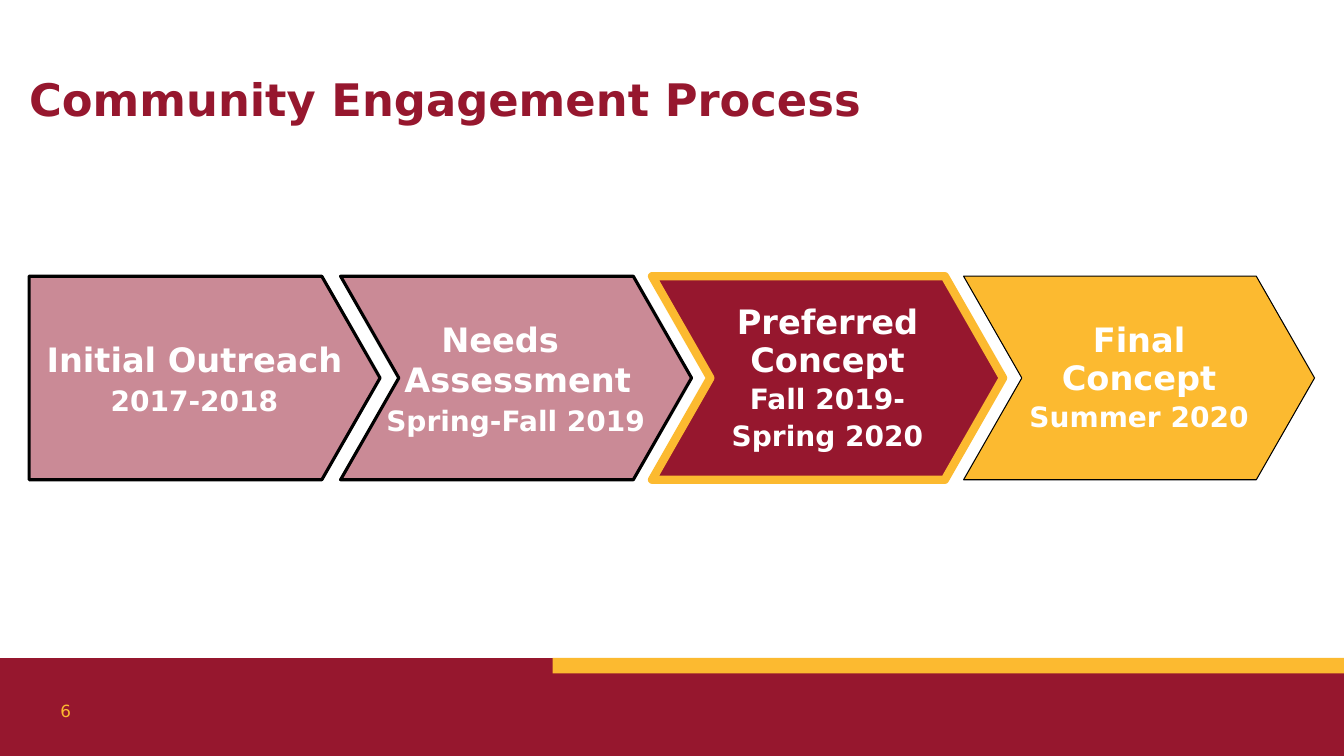
import pptx
import pptx.dml.color
import pptx.enum.shapes
import pptx.enum.text
import pptx.oxml.ns
import pptx.util
from lxml import etree

Pt = pptx.util.Pt
RGBColor = pptx.dml.color.RGBColor
ALIGN = pptx.enum.text.PP_ALIGN

MAROON = RGBColor(0x96, 0x17, 0x2E)
GOLD = RGBColor(0xFC, 0xBA, 0x30)
WHITE = RGBColor(0xFF, 0xFF, 0xFF)
BLACK = RGBColor(0, 0, 0)

STAGE_LEFT, STAGE_TOP = 20.8, 197.3
STAGE_WIDTH, STAGE_HEIGHT = 250.7, 145.4
STAGE_STEP, POINT_DEPTH = 222.5, 41.6


class SlideBuilder:
    font_name = "DejaVu Sans"

    def __init__(self, slide):
        self.slide = slide

    def style(self, paragraph, size, color, bold):
        font = paragraph.font
        font.name = self.font_name
        font.size = Pt(size)
        font.color.rgb = color
        font.bold = bold

    def frame(self, shape, insets):
        frame = shape.text_frame
        frame.word_wrap = True
        frame.vertical_anchor = pptx.enum.text.MSO_ANCHOR.MIDDLE
        frame.margin_left, frame.margin_top, frame.margin_right, frame.margin_bottom = map(Pt, insets)
        return frame

    def band(self, left, top, width, height, color):
        shape = self.slide.shapes.add_shape(
            pptx.enum.shapes.MSO_SHAPE.RECTANGLE, Pt(left), Pt(top), Pt(width), Pt(height))
        shape.shadow.inherit = False
        shape.fill.solid()
        shape.fill.fore_color.rgb = color
        shape.line.fill.background()

    def label(self, left, top, width, height, text, size, color, bold=False, spacing=1.0):
        box = self.slide.shapes.add_textbox(Pt(left), Pt(top), Pt(width), Pt(height))
        paragraph = self.frame(box, (0, 0, 0, 0)).paragraphs[0]
        paragraph.text = text
        paragraph.line_spacing = spacing
        self.style(paragraph, size, color, bold)

    def stage(self, position, fill, opacity, line, line_width, insets, spacing, lines):
        left = STAGE_LEFT + position * STAGE_STEP
        right = left + STAGE_WIDTH
        shoulder = right - POINT_DEPTH
        middle, bottom = STAGE_TOP + STAGE_HEIGHT / 2, STAGE_TOP + STAGE_HEIGHT
        outline = [(left, STAGE_TOP), (shoulder, STAGE_TOP), (right, middle),
                   (shoulder, bottom), (left, bottom)]
        if position:
            outline.append((left + POINT_DEPTH, middle))
        corners = [(Pt(x), Pt(y)) for x, y in outline]
        builder = self.slide.shapes.build_freeform(*corners[0])
        builder.add_line_segments(corners[1:], close=True)
        shape = builder.convert_to_shape()
        shape.shadow.inherit = False
        shape.fill.solid()
        shape.fill.fore_color.rgb = fill
        if opacity < 100:
            qn = pptx.oxml.ns.qn
            color = shape.fill._xPr.find(qn("a:solidFill")).find(qn("a:srgbClr"))
            etree.SubElement(color, qn("a:alpha")).set("val", str(opacity * 1000))
        shape.line.color.rgb = line
        shape.line.width = Pt(line_width)
        frame = self.frame(shape, insets)
        for index, (text, size, indent, space_after) in enumerate(lines):
            paragraph = frame.add_paragraph() if index else frame.paragraphs[0]
            paragraph.text = text
            paragraph.alignment = ALIGN.CENTER
            paragraph.line_spacing = spacing
            paragraph.space_after = Pt(space_after)
            if indent:
                paragraph._p.get_or_add_pPr().set("marL", str(Pt(indent)))
            self.style(paragraph, size, WHITE, True)


def main():
    presentation = pptx.Presentation()
    presentation.slide_width = Pt(960)
    presentation.slide_height = Pt(540)
    builder = SlideBuilder(presentation.slides.add_slide(presentation.slide_layouts[6]))

    builder.band(0, 470, 960, 70, MAROON)
    builder.band(394.8, 470, 565.2, 11, GOLD)
    builder.label(20.8, 43.2, 701.3, 59, "Community Engagement Process", 32, MAROON, True, 0.9)
    builder.label(43.2, 496.8, 28.8, 21.6, "6", 12, GOLD)

    even_insets = (7.2, 3.6, 7.2, 3.6)
    stages = [
        (MAROON, 50, BLACK, 2.25, (0, 3.6, 14.4, 3.6), 1.0,
         [("Initial Outreach", 24, 0, 3), ("2017-2018", 20, 0, 3)]),
        (MAROON, 50, BLACK, 2.25, (0, 3.6, 22.8, 3.6), 1.0,
         [("Needs", 24, 0, 0), ("Assessment", 24, 25, 3), ("Spring-Fall 2019", 20, 22.4, 3)]),
        (MAROON, 100, GOLD, 6, even_insets, 0.95,
         [("Preferred\vConcept", 24, 0, 3), ("Fall 2019-", 20, 0, 3), ("Spring 2020", 20, 0, 3)]),
        (GOLD, 100, BLACK, 0.75, even_insets, 0.95,
         [("Final\vConcept", 24, 0, 3), ("Summer 2020", 20, 0, 3)]),
    ]
    for position, stage in enumerate(stages):
        builder.stage(position, *stage)

    presentation.save("out.pptx")


if __name__ == "__main__":
    main()
